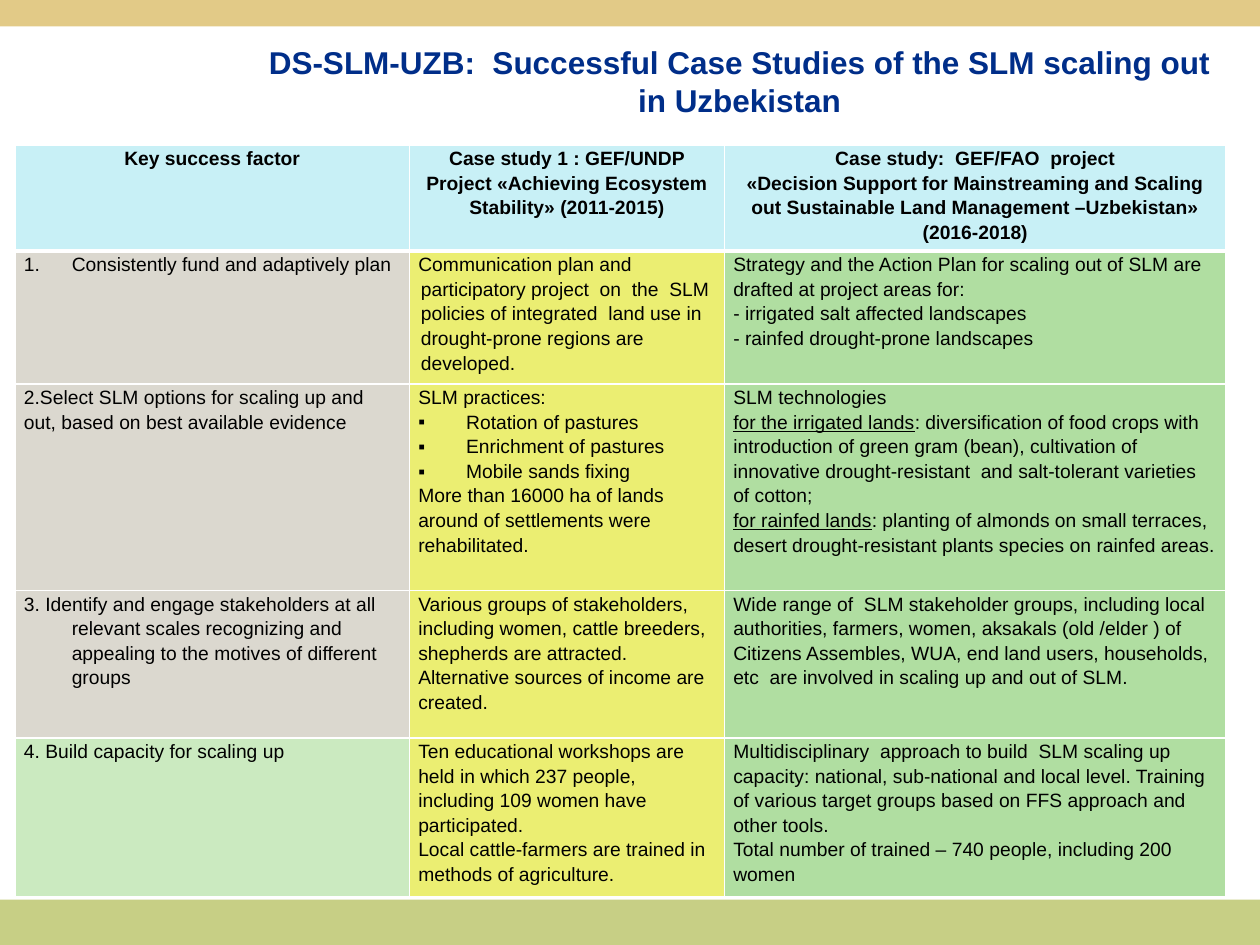
from lxml.etree import SubElement
from pptx import Presentation
from pptx.dml.color import RGBColor
from pptx.enum.shapes import MSO_SHAPE
from pptx.enum.text import MSO_ANCHOR, PP_ALIGN
from pptx.oxml.ns import qn
from pptx.util import Inches, Pt

# Content: a paragraph is plain text or (style, text, more text)
TITLE = "DS-SLM-UZB:  Successful Case Studies of the SLM scaling out in Uzbekistan"
ROWS = [
    [["Key success factor"],
     ["Case study 1 : GEF/UNDP Project «Achieving Ecosystem Stability» (2011-2015)"],
     ["Case study:  GEF/FAO  project",
      "«Decision Support for Mainstreaming and Scaling out Sustainable Land "
      "Management –Uzbekistan» (2016-2018)"]],
    [[("number", "Consistently fund and adaptively plan")],
     [("nudge", "Communication plan and participatory project  on  the  SLM policies of "
       "integrated  land use in drought-prone regions are developed.")],
     ["Strategy and the Action Plan for scaling out of SLM are drafted at project areas for:",
      "- irrigated salt affected landscapes",
      "- rainfed drought-prone landscapes"]],
    [["2.Select SLM options for scaling up and out, based on best available evidence"],
     ["SLM practices:",
      ("bullet", "Rotation of pastures"),
      ("bullet", "Enrichment of pastures"),
      ("bullet", "Mobile sands fixing"),
      "More than 16000 ha of lands around of settlements were rehabilitated."],
     ["SLM technologies",
      ("lead", "for the irrigated lands",
       ": diversification of food crops with introduction of green gram (bean), cultivation "
       "of innovative drought-resistant  and salt-tolerant varieties of cotton;"),
      ("lead", "for rainfed lands",
       ": planting of almonds on small terraces, desert drought-resistant plants species "
       "on rainfed areas.")]],
    [[("hang", "3. Identify and engage stakeholders at all relevant scales recognizing and "
       "appealing to the motives of different groups")],
     ["Various groups of stakeholders, including women, cattle breeders, shepherds are attracted.",
      "Alternative sources of income are created."],
     ["Wide range of  SLM stakeholder groups, including local authorities, farmers, women, "
      "aksakals (old /elder ) of  Citizens Assembles, WUA, end land users, households, "
      "etc  are involved in scaling up and out of SLM."]],
    [["4. Build capacity for scaling up"],
     ["Ten educational workshops are held in which 237 people, including 109 women have "
      "participated.",
      "Local cattle-farmers are trained in methods of agriculture."],
     ["Multidisciplinary  approach to build  SLM scaling up capacity: national, sub-national "
      "and local level. Training of various target groups based on FFS approach and other tools.",
      "Total number of trained – 740 people, including 200 women"]],
]
WIDTHS = [3.13, 2.5, 3.98]
HEIGHTS = [0.7, 0.93, 1.64, 1.17, 1.17]
BARS = [(7.14, 0.36, "C7CF85"), (0, 0.21, "E2CA87")]
INDENTS = {"number": 0.38, "bullet": 0.38, "hang": 0.38, "nudge": 0.02}

THEME = {
    "font": "Arial", "title": "002E89", "text": "000000", "line": "FFFFFF",
    "head": "C8F0F6", "body": ["DBD8CF", "EBEE72", "B0DEA1"], "last": "CBEAC0",
    "title size": 18, "text size": 11,
}


def style(font, size, color, bold):
    font.name, font.size, font.bold = THEME["font"], Pt(size), bold
    font.color.rgb = RGBColor.from_string(color)


def indent(para, kind):
    """Hang the first line and add the list mark, if any."""
    props = para._p.get_or_add_pPr()
    gap = Inches(INDENTS[kind])
    props.set("marL", str(gap))
    props.set("indent", str(-gap))
    if kind == "number":
        SubElement(props, qn("a:buAutoNum"), type="arabicPeriod")
    elif kind == "bullet":
        SubElement(props, qn("a:buFont"), typeface=THEME["font"])
        SubElement(props, qn("a:buChar"), char="▪")


def border(cell, head):
    props = cell._tc.get_or_add_tcPr()
    for side in "LRTB":
        width = Pt(3 if head and side == "B" else 1)
        line = SubElement(props, qn("a:ln" + side), w=str(width))
        fill = SubElement(line, qn("a:solidFill"))
        SubElement(fill, qn("a:srgbClr"), val=THEME["line"])


def write(cell, paras, head):
    frame = cell.text_frame
    for i, item in enumerate(paras):
        kind, *parts = ("plain", item) if isinstance(item, str) else item
        para = frame.add_paragraph() if i else frame.paragraphs[0]
        if kind in INDENTS:
            indent(para, kind)
        para.line_spacing = 1.15
        para.alignment = PP_ALIGN.CENTER if head else PP_ALIGN.LEFT
        for j, part in enumerate(parts):
            run = para.add_run()
            run.text = part
            style(run.font, THEME["text size"], THEME["text"], head)
            run.font.underline = kind == "lead" and j == 0


def shade(row, col):
    if row == 0:
        return THEME["head"]
    if row == len(ROWS) - 1 and col == 0:
        return THEME["last"]
    return THEME["body"][col]


deck = Presentation()
deck.slide_width, deck.slide_height = Inches(10), Inches(7.5)
slide = deck.slides.add_slide(deck.slide_layouts[6])

# Bars at the foot and the top
for top, high, color in BARS:
    bar = slide.shapes.add_shape(MSO_SHAPE.RECTANGLE, 0, Inches(top), Inches(10), Inches(high))
    bar.shadow.inherit = False
    bar.fill.solid()
    bar.fill.fore_color.rgb = RGBColor.from_string(color)
    bar.line.fill.background()

# Title
box = slide.shapes.add_textbox(Inches(2.01), Inches(0.29), Inches(7.72), Inches(0.79))
frame = box.text_frame
frame.word_wrap = True
frame.vertical_anchor = MSO_ANCHOR.TOP
frame.text = TITLE
frame.paragraphs[0].alignment = PP_ALIGN.CENTER
style(frame.paragraphs[0].runs[0].font, THEME["title size"], THEME["title"], True)

# Table of case studies
table = slide.shapes.add_table(
    len(ROWS), len(WIDTHS), Inches(0.12), Inches(1.15),
    Inches(sum(WIDTHS)), Inches(sum(HEIGHTS))).table
for col, wide in zip(table.columns, WIDTHS):
    col.width = Inches(wide)
for row, high in zip(table.rows, HEIGHTS):
    row.height = Inches(high)
for r, cells in enumerate(ROWS):
    for c, paras in enumerate(cells):
        cell = table.cell(r, c)
        cell.margin_left = cell.margin_right = Inches(0.07)
        cell.margin_top = cell.margin_bottom = 0
        border(cell, r == 0)
        cell.fill.solid()
        cell.fill.fore_color.rgb = RGBColor.from_string(shade(r, c))
        write(cell, paras, r == 0)

deck.save("out.pptx")
